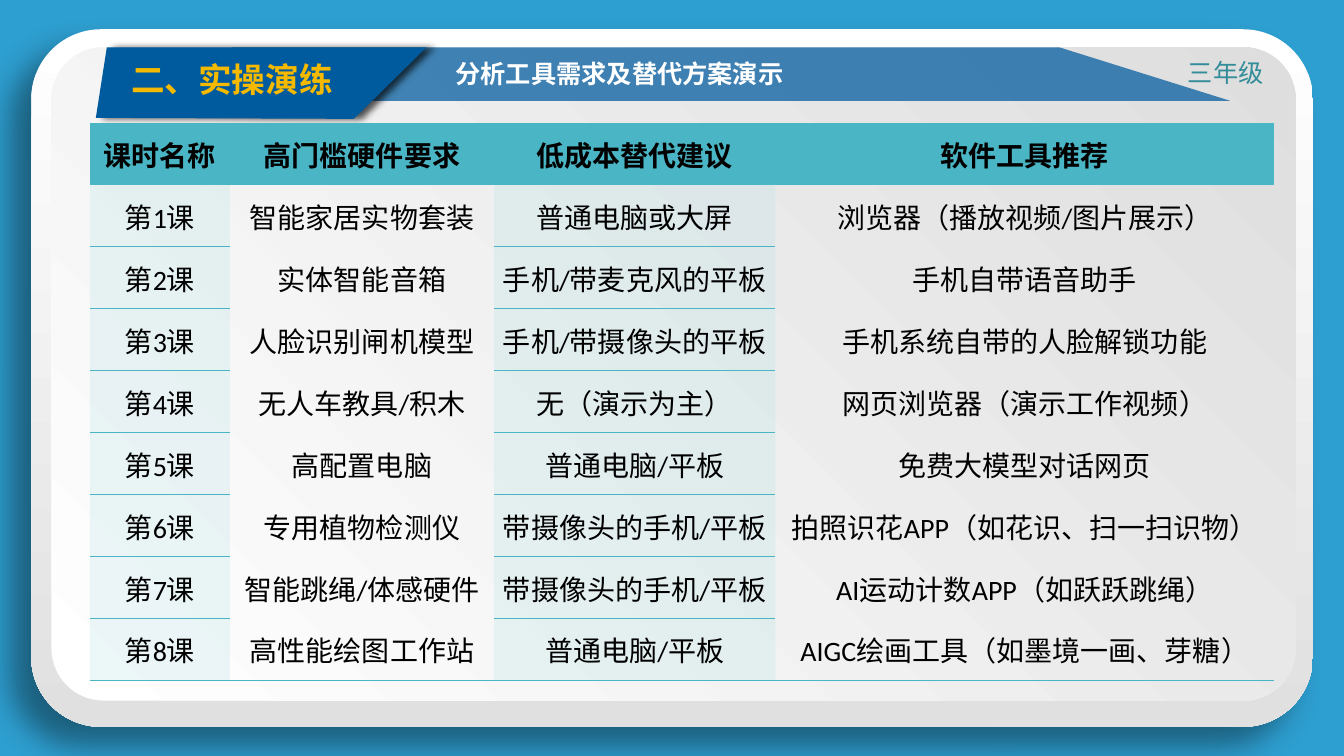
from dataclasses import dataclass

import pptx
import pptx.dml.color
import pptx.enum.shapes
import pptx.enum.text
import pptx.oxml
import pptx.oxml.ns
import pptx.util

RGBColor = pptx.dml.color.RGBColor
ALIGN = pptx.enum.text.PP_ALIGN
SKY = RGBColor(0x2E, 0x9F, 0xD1)
WHITE = RGBColor(0xFF, 0xFF, 0xFF)
SILVER = RGBColor(0xE0, 0xE0, 0xE0)
PALE_GREY = RGBColor(0xDD, 0xDE, 0xDD)
NAVY = RGBColor(0x00, 0x5A, 0x9E)
GOLD = RGBColor(0xF5, 0xB9, 0x00)
TEAL = RGBColor(0x4A, 0xB5, 0xC4)
PALE_TEAL = RGBColor(0xB7, 0xE1, 0xE7)
DEEP_TEAL = RGBColor(0x32, 0x8C, 0x99)
BLACK = RGBColor(0x00, 0x00, 0x00)
CJK_FONT = "Noto Sans CJK SC"
PLAIN_TABLE_STYLE = "{2D5ABB26-0587-4C30-8999-92F81FD0307C}"
NS = pptx.oxml.ns.nsdecls("a")

WIDTH = pptx.util.Inches(13.33)
HEIGHT = pptx.util.Inches(7.5)


def across(percent: float) -> int:
    return round(WIDTH * percent / 100)


def down(percent: float) -> int:
    return round(HEIGHT * percent / 100)


@dataclass
class Box:
    """Place and size in percent of the slide."""
    left: float
    top: float
    width: float
    height: float

    def emu(self) -> tuple:
        return across(self.left), down(self.top), across(self.width), down(self.height)


@dataclass
class Shadow:
    opacity: int
    blur: int
    distance: int
    angle: int


@dataclass
class Panel:
    box: Box
    corner: float
    end_color: RGBColor
    angle: int
    shadow: Shadow | None = None


@dataclass
class Banner:
    corners: list
    opacity: int = 100
    shadow: Shadow | None = None


@dataclass
class Style:
    size: int
    font: str
    color: RGBColor
    bold: bool = False
    align: ALIGN = ALIGN.CENTER


@dataclass
class Label:
    text: str
    box: Box
    style: Style


PANELS = [
    Panel(Box(2.33, 3.87, 95.35, 92.27), 0.1, SILVER, 270, Shadow(40, 22, 20, 135)),
    Panel(Box(3.83, 6.27, 92.57, 86.4), 0.08, PALE_GREY, 45),
]
BANNERS = [
    Banner([(17.25, 6.27), (78.84, 6.27), (91.52, 13.33), (17.25, 13.33)], opacity=73),
    Banner([(7.95, 6.27), (31.73, 6.27), (26.33, 15.73), (7.13, 15.6)],
           shadow=Shadow(67, 5, 5, 0)),
]
SECTION = Label("二、实操演练", Box(6.68, 7.07, 21.16, 9.47), Style(24, CJK_FONT, GOLD, True))
LABELS = [
    Label("分析工具需求及替代方案演示", Box(33.16, 7.07, 43.29, 5.33),
          Style(18, "Times New Roman", WHITE, True, ALIGN.LEFT)),
    Label("三年级", Box(73.44, 6.93, 21.31, 5.33),
          Style(18, CJK_FONT, DEEP_TEAL, align=ALIGN.RIGHT)),
]
COLUMNS = [10.43, 19.65, 20.93, 37.13]
ROW_HEIGHT = 8.19
HEADER = ("课时名称", "高门槛硬件要求", "低成本替代建议", "软件工具推荐")
LESSONS = [
    ("智能家居实物套装", "普通电脑或大屏", "浏览器（播放视频/图片展示）"),
    ("实体智能音箱", "手机/带麦克风的平板", "手机自带语音助手"),
    ("人脸识别闸机模型", "手机/带摄像头的平板", "手机系统自带的人脸解锁功能"),
    ("无人车教具/积木", "无（演示为主）", "网页浏览器（演示工作视频）"),
    ("高配置电脑", "普通电脑/平板", "免费大模型对话网页"),
    ("专用植物检测仪", "带摄像头的手机/平板", "拍照识花APP（如花识、扫一扫识物）"),
    ("智能跳绳/体感硬件", "带摄像头的手机/平板", "AI运动计数APP（如跃跃跳绳）"),
    ("高性能绘图工作站", "普通电脑/平板", "AIGC绘画工具（如墨境一画、芽糖）"),
]


def write(frame, text: str, style: Style) -> None:
    paragraph = frame.paragraphs[0]
    paragraph.alignment = style.align
    run = paragraph.add_run()
    run.text = text
    run.font.size = pptx.util.Pt(style.size)
    run.font.bold = style.bold
    run.font.color.rgb = style.color
    run.font.name = style.font
    run.font._element.append(pptx.oxml.parse_xml(f'<a:ea {NS} typeface="{CJK_FONT}"/>'))


def set_opacity(properties, percent: int) -> None:
    color = properties.find(".//" + pptx.oxml.ns.qn("a:srgbClr"))
    color.append(pptx.oxml.parse_xml(f'<a:alpha {NS} val="{percent * 1000}"/>'))


def finish(shape, shadow: Shadow | None) -> None:
    """Remove the outline and set the shadow, if any."""
    shape.line.fill.background()
    shape.shadow.inherit = False
    if shadow:
        effects = shape._element.spPr.find(pptx.oxml.ns.qn("a:effectLst"))
        effects.append(pptx.oxml.parse_xml(
            f'<a:outerShdw {NS} blurRad="{pptx.util.Pt(shadow.blur)}" '
            f'dist="{pptx.util.Pt(shadow.distance)}" dir="{shadow.angle * 60000}" '
            f'algn="ctr" rotWithShape="0"><a:srgbClr val="{BLACK}">'
            f'<a:alpha val="{shadow.opacity * 1000}"/></a:srgbClr></a:outerShdw>'))


def draw_panel(slide, panel: Panel) -> None:
    frame = slide.shapes.add_shape(
        pptx.enum.shapes.MSO_SHAPE.ROUNDED_RECTANGLE, *panel.box.emu())
    frame.adjustments[0] = panel.corner
    frame.fill.gradient()
    frame.fill.gradient_angle = panel.angle
    for stop, color, position in zip(frame.fill.gradient_stops, (WHITE, panel.end_color), (0, 1)):
        stop.color.rgb = color
        stop.position = position
    finish(frame, panel.shadow)


def draw_banner(slide, banner: Banner) -> None:
    start, *rest = [(across(x), down(y)) for x, y in banner.corners]
    builder = slide.shapes.build_freeform(*start)
    builder.add_line_segments(rest, close=True)
    ribbon = builder.convert_to_shape()
    ribbon.fill.solid()
    ribbon.fill.fore_color.rgb = NAVY
    if banner.opacity < 100:
        set_opacity(ribbon._element.spPr, banner.opacity)
    finish(ribbon, banner.shadow)


def draw_label(slide, label: Label) -> None:
    frame = slide.shapes.add_textbox(*label.box.emu()).text_frame
    frame.word_wrap = True
    write(frame, label.text, label.style)


def draw_section(slide, label: Label) -> None:
    heading = slide.shapes.title
    heading.left, heading.top, heading.width, heading.height = label.box.emu()
    heading.text_frame.vertical_anchor = pptx.enum.text.MSO_ANCHOR.TOP
    heading.text_frame.auto_size = pptx.enum.text.MSO_AUTO_SIZE.NONE
    heading.text_frame.word_wrap = True
    write(heading.text_frame, label.text, label.style)
    slide.shapes._spTree.append(heading._element)  # in front of the banners


def draw_lessons(slide) -> None:
    rows = [HEADER] + [(f"第{n}课", *lesson) for n, lesson in enumerate(LESSONS, 1)]
    area = Box(6.68, 16.27, sum(COLUMNS), ROW_HEIGHT * len(rows))
    lessons = slide.shapes.add_table(len(rows), len(COLUMNS), *area.emu()).table
    lessons._tbl.tblPr.find(pptx.oxml.ns.qn("a:tableStyleId")).text = PLAIN_TABLE_STYLE
    for column, width in zip(lessons.columns, COLUMNS):
        column.width = across(width)
    for r, texts in enumerate(rows):
        lessons.rows[r].height = down(ROW_HEIGHT)
        for c, text in enumerate(texts):
            cell = lessons.cell(r, c)
            cell.margin_left = cell.margin_right = cell.margin_top = pptx.util.Inches(0.01)
            cell.margin_bottom = 0
            cell.vertical_anchor = pptx.enum.text.MSO_ANCHOR.MIDDLE
            write(cell.text_frame, text, Style(20, "Calibri", BLACK, r == 0))
            tinted = c % 2 == 0
            if r == 0 or tinted:
                cell.fill.solid()
                cell.fill.fore_color.rgb = TEAL if r == 0 else PALE_TEAL
            else:
                cell.fill.background()
            if r > 0 and tinted:
                set_opacity(cell._tc.tcPr, 25)
            # Rules below the tinted columns and the last row
            if r == len(LESSONS) or (r > 0 and tinted):
                cell._tc.tcPr.insert(0, pptx.oxml.parse_xml(
                    f'<a:lnB {NS} w="{pptx.util.Pt(0.75)}"><a:solidFill>'
                    f'<a:srgbClr val="{TEAL}"/></a:solidFill></a:lnB>'))


def main() -> None:
    deck = pptx.Presentation()
    deck.slide_width, deck.slide_height = WIDTH, HEIGHT
    slide = deck.slides.add_slide(deck.slide_layouts[5])
    slide.background.fill.solid()
    slide.background.fill.fore_color.rgb = SKY
    # Backdrop
    for panel in PANELS:
        draw_panel(slide, panel)
    for banner in BANNERS:
        draw_banner(slide, banner)
    # Content
    draw_section(slide, SECTION)
    draw_lessons(slide)
    for label in LABELS:
        draw_label(slide, label)
    deck.save("out.pptx")


if __name__ == "__main__":
    main()
